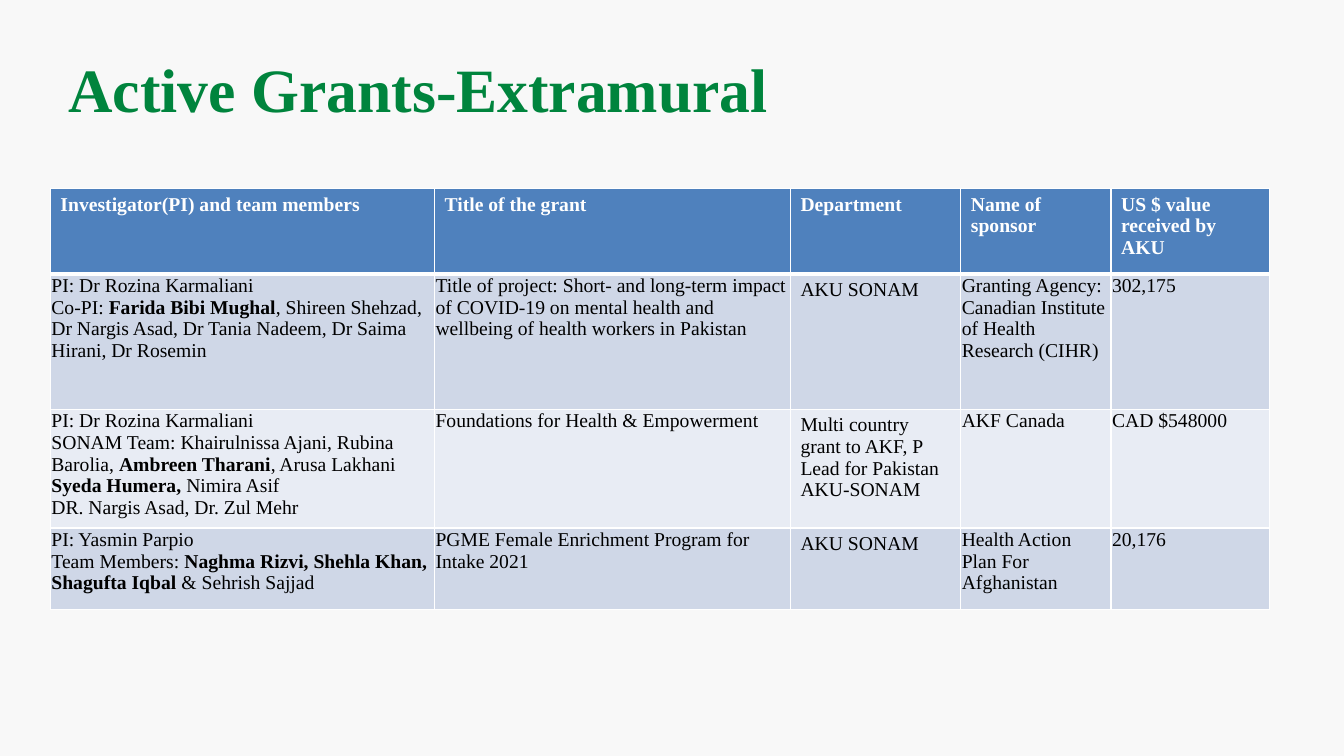
import pptx
import pptx.dml.color
import pptx.enum.text
import pptx.oxml.ns
import pptx.util
from lxml import etree

Inches = pptx.util.Inches

FONT = "Times New Roman"
GREEN, BLUE, WHITE, BLACK = "00843D", "4F81BD", "FFFFFF", "000000"
BACKGROUND = "F8F8F8"
BANDS = ["CFD7E7", "E8ECF4"]

TITLE = "Active Grants-Extramural"
HEADERS = [
    "Investigator(PI) and team members",
    "Title of the grant",
    "Department",
    "Name of sponsor",
    "US $ value received by AKU",
]
# Each cell is a list of paragraphs; *stars* mark bold, \v a line break.
GRANTS = [
    [
        ["PI: Dr Rozina Karmaliani",
         "Co-PI: *Farida Bibi Mughal*, Shireen Shehzad, Dr Nargis Asad, "
         "Dr Tania Nadeem, Dr Saima Hirani, Dr Rosemin"],
        ["Title of project: Short- and long-term impact of COVID-19 on mental "
         "health and wellbeing of health workers in Pakistan"],
        ["AKU SONAM"],
        ["Granting Agency: Canadian Institute of Health Research (CIHR)"],
        ["302,175"],
    ],
    [
        ["PI: Dr Rozina Karmaliani",
         "SONAM Team: Khairulnissa Ajani, Rubina Barolia, *Ambreen Tharani*, Arusa Lakhani",
         "*Syeda Humera, *Nimira Asif",
         "DR. Nargis Asad, Dr. Zul Mehr"],
        ["Foundations for Health & Empowerment"],
        ["Multi country grant to AKF, P", "Lead for Pakistan AKU-SONAM"],
        ["AKF Canada"],
        ["CAD $548000"],
    ],
    [
        ["PI: Yasmin Parpio\vTeam Members: *Naghma Rizvi, Shehla Khan, "
         "Shagufta Iqbal* & Sehrish Sajjad"],
        ["PGME Female Enrichment Program for Intake 2021"],
        ["AKU SONAM"],
        ["Health Action Plan For Afghanistan"],
        ["20,176"],
    ],
]
COLUMN_WIDTHS = [3.81, 3.53, 1.69, 1.49, 1.57]
ROW_HEIGHTS = [0.85, 1.34, 1.07, 0.81]
DEPARTMENT = HEADERS.index("Department")
ROOMY = (0.1, 0.05, 0.1, 0.05)
TIGHT = (0.01, 0.01, 0.01, 0)


def color(value):
    return pptx.dml.color.RGBColor.from_string(value)


def paint(fill, value):
    fill.solid()
    fill.fore_color.rgb = color(value)


def write(frame, paragraphs, size=14, ink=BLACK, bold=False):
    """Fill a text frame, switching bold at every star."""
    for index, text in enumerate(paragraphs):
        para = frame.paragraphs[0] if index == 0 else frame.add_paragraph()
        for part, piece in enumerate(text.split("*")):
            for line, words in enumerate(piece.split("\v")):
                if line:
                    para.add_line_break()
                if not words:
                    continue
                span = para.add_run()
                span.text = words
                span.font.name = FONT
                span.font.size = pptx.util.Pt(size)
                span.font.bold = bold or part % 2 == 1
                span.font.color.rgb = color(ink)


def set_margins(holder, margins):
    (holder.margin_left, holder.margin_top,
     holder.margin_right, holder.margin_bottom) = map(Inches, margins)


def add_borders(cell, top, bottom):
    """White cell borders; top and bottom widths in points."""
    properties = cell._tc.get_or_add_tcPr()
    for side, width in (("L", 1), ("R", 1), ("T", top), ("B", bottom)):
        line = etree.SubElement(properties, pptx.oxml.ns.qn(f"a:ln{side}"),
                                w=str(pptx.util.Pt(width)))
        fill = etree.SubElement(line, pptx.oxml.ns.qn("a:solidFill"))
        etree.SubElement(fill, pptx.oxml.ns.qn("a:srgbClr"), val=WHITE)


def add_title(page):
    box = page.shapes.add_textbox(Inches(0.58), Inches(0.25), Inches(12), Inches(1.25))
    frame = box.text_frame
    frame.word_wrap = True
    frame.vertical_anchor = pptx.enum.text.MSO_ANCHOR.MIDDLE
    set_margins(frame, ROOMY)
    write(frame, [TITLE], size=44, ink=GREEN, bold=True)


def add_grants(page):
    rows = [[[header] for header in HEADERS]] + GRANTS
    table = page.shapes.add_table(
        len(rows), len(HEADERS), Inches(0.5), Inches(1.87),
        Inches(sum(COLUMN_WIDTHS)), Inches(sum(ROW_HEIGHTS))).table
    for column, width in zip(table.columns, COLUMN_WIDTHS):
        column.width = Inches(width)
    for row, height in zip(table.rows, ROW_HEIGHTS):
        row.height = Inches(height)
    for r, row in enumerate(rows):
        is_header = r == 0
        for c, paragraphs in enumerate(row):
            cell = table.cell(r, c)
            set_margins(cell, ROOMY if is_header or c == DEPARTMENT else TIGHT)
            add_borders(cell, top=3 if r == 1 else 1, bottom=3 if is_header else 1)
            paint(cell.fill, BLUE if is_header else BANDS[(r - 1) % 2])
            write(cell.text_frame, paragraphs,
                  ink=WHITE if is_header else BLACK, bold=is_header)


def main():
    deck = pptx.Presentation()
    deck.slide_width, deck.slide_height = Inches(13.33), Inches(7.5)
    page = deck.slides.add_slide(deck.slide_layouts[6])
    paint(page.background.fill, BACKGROUND)
    add_title(page)
    add_grants(page)
    deck.save("out.pptx")


if __name__ == "__main__":
    main()
